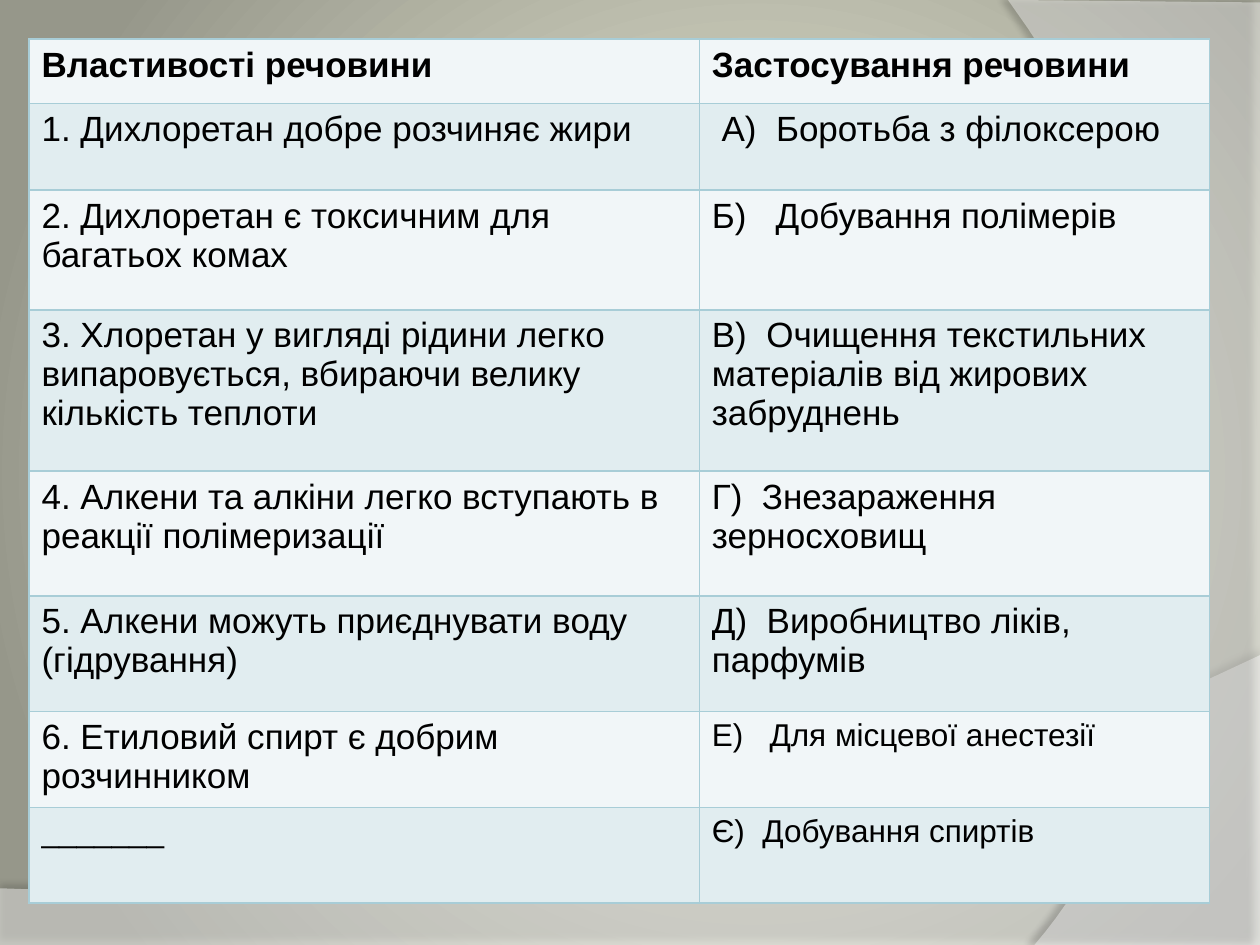
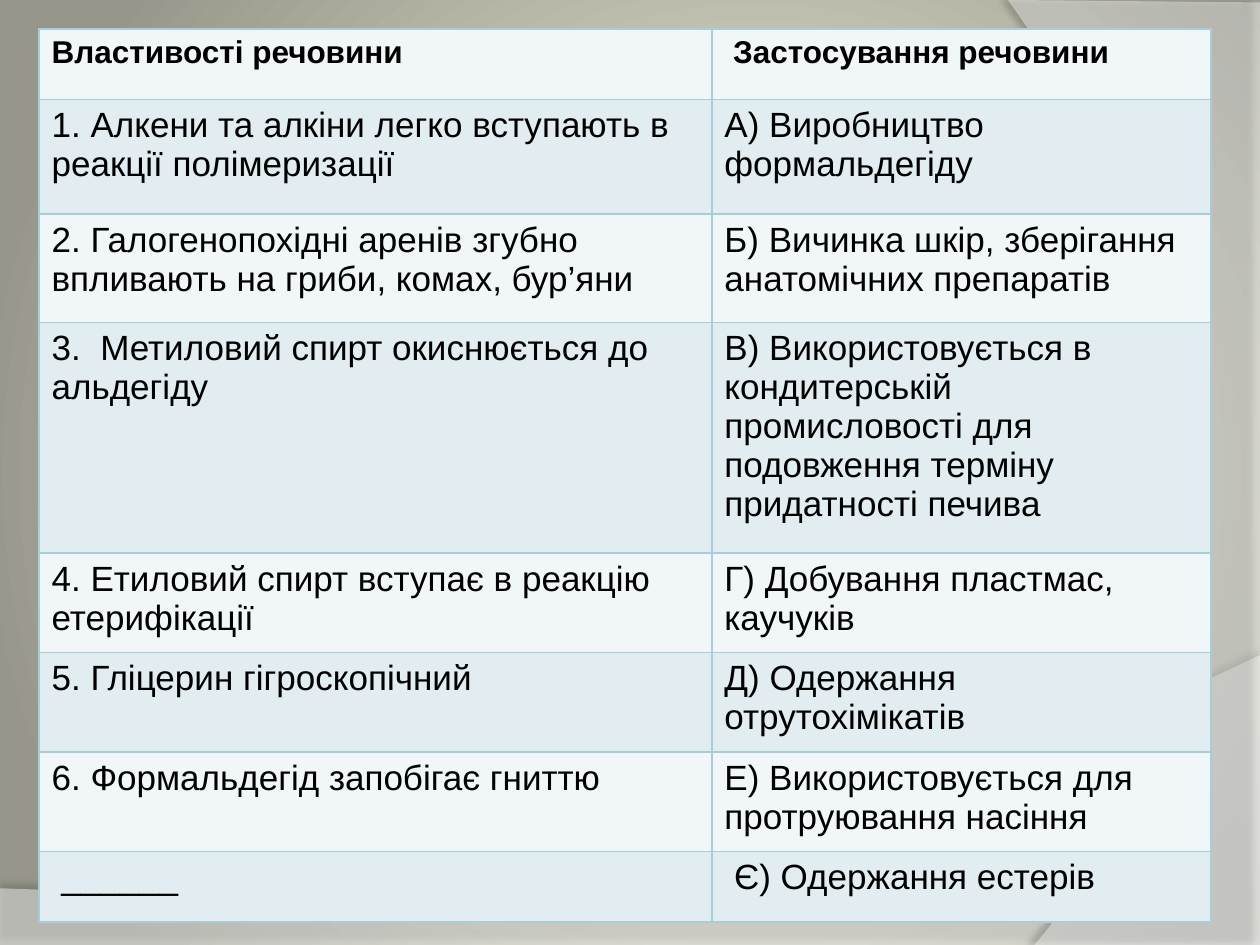
"""Build two matching-exercise slides on properties and uses of substances."""
from lxml import etree
from pptx import Presentation
from pptx import util as u
from pptx.dml.color import RGBColor
from pptx.oxml import parse_xml
from pptx.oxml.ns import nsdecls, qn

COLORS = {"glow": "F4F5E0", "edge": "96978A", "wave": "FFFFFF", "shade": "000000",
          "odd": "F1F6F8", "even": "E1EDF0", "border": "A8CDD7", "ink": "000000"}
FONT, BODY_SIZE, SMALL_SIZE = "Arial", 20, 18
WIDTH, HEIGHT = 10, 7.5

EXERCISES = [
    {"corner": (0.23, 0.31), "columns": (5.32, 4.05),
     "heights": (0.51, 0.69, 0.95, 1.28, 0.99, 0.92, 0.76, 0.76),
     "small": {(6, 1), (7, 0), (7, 1)},
     "pairs": [
         ("Властивості речовини", "Застосування речовини"),
         ("1. Дихлоретан добре розчиняє жири", " А)  Боротьба з філоксерою"),
         ("2. Дихлоретан є токсичним для багатьох комах", "Б)   Добування полімерів"),
         ("3. Хлоретан у вигляді рідини легко випаровується, вбираючи велику кількість теплоти",
          "В)  Очищення текстильних матеріалів від жирових забруднень"),
         ("4. Алкени та алкіни легко вступають в реакції полімеризації",
          "Г)  Знезараження зерносховищ"),
         ("5. Алкени можуть приєднувати воду (гідрування)", "Д)  Виробництво ліків, парфумів"),
         ("6. Етиловий спирт є добрим розчинником", "Е)   Для місцевої анестезії"),
         ("_______", "Є)  Добування спиртів")]},
    {"corner": (0.31, 0.23), "columns": (5.34, 3.96),
     "heights": (0.56, 0.91, 0.86, 1.83, 0.79, 0.79, 0.79, 0.56),
     "small": {(0, 0), (0, 1)},
     "pairs": [
         ("Властивості речовини", " Застосування речовини"),
         ("1. Алкени та алкіни легко вступають в реакції полімеризації",
          "А) Виробництво формальдегіду"),
         ("2. Галогенопохідні аренів згубно впливають на гриби, комах, бур’яни",
          "Б) Вичинка шкір, зберігання анатомічних препаратів"),
         ("3.  Метиловий спирт окиснюється до альдегіду",
          "В) Використовується в кондитерській промисловості для подовження терміну "
          "придатності печива"),
         ("4. Етиловий спирт вступає в реакцію етерифікації", "Г) Добування пластмас, каучуків"),
         ("5. Гліцерин гігроскопічний", "Д) Одержання отрутохімікатів"),
         ("6. Формальдегід запобігає гниттю", "Е) Використовується для  протруювання насіння"),
         (" ______", " Є) Одержання естерів")]},
]

WAVES = [
    {"corners": [(0, 7.05), (0, HEIGHT), (WIDTH, HEIGHT)],
     "curve": [(WIDTH, 5.2), (5.59, 7.29), (3.91, 7.19), (0, 7.05)],
     "opacity": 45, "shade": (35, 4, 3.5, 270)},
    {"corners": [(WIDTH, 0.02), (WIDTH, HEIGHT)],
     "curve": [(8.21, HEIGHT), (9.35, 6.19), (10.18, 3), (8, 0)],
     "opacity": 40, "shade": (45, 4, 4, 180)},
]


def rgb(name):
    return RGBColor.from_string(COLORS[name])


def bezier(points, steps=40):
    weights = (1, 3, 3, 1)
    for step in range(steps + 1):
        t = step / steps
        yield tuple(sum(w * (1 - t) ** (3 - i) * t ** i * point[axis]
                        for i, (w, point) in enumerate(zip(weights, points)))
                    for axis in (0, 1))


def paint_background(master):
    fill = master.background.fill
    fill.gradient()
    for stop, name in zip(fill.gradient_stops, ("glow", "edge")):
        stop.color.rgb = rgb(name)
    gradient = master.element.find(".//" + qn("a:gradFill"))
    gradient.replace(gradient.find(qn("a:lin")), parse_xml(
        f'<a:path {nsdecls("a")} path="circle">'
        '<a:fillToRect l="60000" t="50000" r="40000" b="50000"/></a:path>'))


def draw_wave(slide, layout, wave):
    outline = [(u.Inches(x), u.Inches(y)) for x, y in wave["corners"] + list(bezier(wave["curve"]))]
    builder = slide.shapes.build_freeform(*outline[0])
    builder.add_line_segments(outline[1:], close=True)
    sheet = builder.convert_to_shape()
    sheet.fill.solid()
    sheet.fill.fore_color.rgb = rgb("wave")
    sheet.line.fill.background()
    tint = sheet.element.spPr.find(".//" + qn("a:solidFill"))[0]
    etree.SubElement(tint, qn("a:alpha"), val=str(wave["opacity"] * 1000))
    opacity, blur, distance, angle = wave["shade"]
    sheet.element.spPr.append(parse_xml(
        f'<a:effectLst {nsdecls("a")}><a:outerShdw blurRad="{u.Pt(blur)}" '
        f'dist="{u.Pt(distance)}" dir="{angle * 60000}" algn="ctr" rotWithShape="0">'
        f'<a:srgbClr val="{COLORS["shade"]}"><a:alpha val="{opacity * 1000}"/></a:srgbClr>'
        '</a:outerShdw></a:effectLst>'))
    layout.shapes.element.append(sheet.element)


def format_cell(cell, wording, size, header, band):
    cell.text_frame.text = wording
    font = cell.text_frame.paragraphs[0].runs[0].font
    font.name, font.size, font.bold = FONT, u.Pt(size), header
    font.color.rgb = rgb("ink")
    properties = cell._tc.get_or_add_tcPr()
    for side in ("lnL", "lnR", "lnT", "lnB"):
        properties.append(parse_xml(
            f'<a:{side} {nsdecls("a")} w="{u.Pt(1)}"><a:solidFill>'
            f'<a:srgbClr val="{COLORS["border"]}"/></a:solidFill></a:{side}>'))
    cell.fill.solid()
    cell.fill.fore_color.rgb = rgb(band)


def add_exercise(slide, exercise):
    columns, heights, pairs = (exercise[key] for key in ("columns", "heights", "pairs"))
    box = (*exercise["corner"], sum(columns), sum(heights))
    matching = slide.shapes.add_table(len(pairs), len(columns), *map(u.Inches, box)).table
    matching.first_row = matching.horz_banding = False
    for column, width in zip(matching.columns, columns):
        column.width = u.Inches(width)
    for row, height in zip(matching.rows, heights):
        row.height = u.Inches(height)
    for r, pair in enumerate(pairs):
        for c, wording in enumerate(pair):
            size = SMALL_SIZE if (r, c) in exercise["small"] else BODY_SIZE
            format_cell(matching.cell(r, c), wording, size, r == 0, "even" if r % 2 else "odd")


def main():
    deck = Presentation()
    deck.slide_width, deck.slide_height = u.Inches(WIDTH), u.Inches(HEIGHT)
    blank = deck.slide_layouts[6]
    paint_background(deck.slide_master)
    slides = [deck.slides.add_slide(blank) for _ in EXERCISES]
    for wave in WAVES:
        draw_wave(slides[0], blank, wave)
    for slide, exercise in zip(slides, EXERCISES):
        add_exercise(slide, exercise)
    deck.save("out.pptx")


if __name__ == "__main__":
    main()
